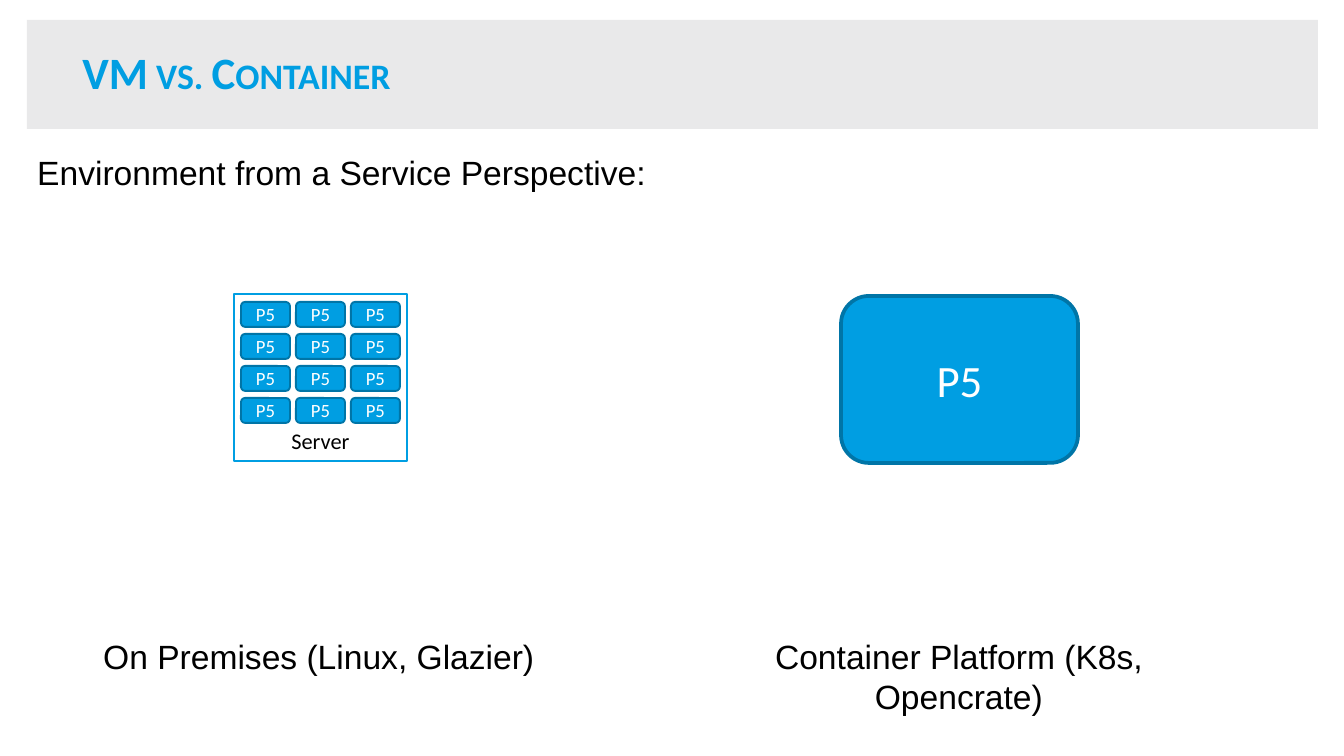
from pptx import Presentation
from pptx.dml.color import RGBColor
from pptx.enum.shapes import MSO_SHAPE
from pptx.enum.text import MSO_ANCHOR, MSO_AUTO_SIZE, PP_ALIGN
from pptx.util import Pt

RECT, ROUNDED = MSO_SHAPE.RECTANGLE, MSO_SHAPE.ROUNDED_RECTANGLE
MIDDLE, BOTTOM = MSO_ANCHOR.MIDDLE, MSO_ANCHOR.BOTTOM
LEFT, CENTER = PP_ALIGN.LEFT, PP_ALIGN.CENTER
FIT_TEXT = MSO_AUTO_SIZE.SHAPE_TO_FIT_TEXT

EMU_PER_PX = 914400 / 134.4
TITLE_ONLY = 5
COLORS = {
    "band": "E9E9EA",
    "blue": "009EE2",
    "dark_blue": "0075A7",
    "white": "FFFFFF",
    "black": "000000",
}


def px(*lengths):
    return [round(length * EMU_PER_PX) for length in lengths]


def rgb(name):
    return RGBColor.from_string(COLORS[name])


def add_text(frame, text, size, color, font="Calibri", align=CENTER):
    paragraph = frame.paragraphs[0]
    paragraph.alignment = align
    run = paragraph.add_run()
    run.text = text
    run.font.name = font
    run.font.size = Pt(size)
    run.font.color.rgb = rgb(color)
    return run


def add_box(shapes, kind, at, fill, line=None, line_width=1):
    box = shapes.add_shape(kind, *px(*at))
    box.shadow.inherit = False
    box.fill.solid()
    box.fill.fore_color.rgb = rgb(fill)
    if line:
        box.line.color.rgb = rgb(line)
        box.line.width = Pt(line_width)
    else:
        box.line.fill.background()
    return box


def add_service(shapes, at, size, line_width=1):
    service = add_box(shapes, ROUNDED, at, "blue", "dark_blue", line_width)
    frame = service.text_frame
    frame.margin_left = frame.margin_right = 0
    frame.margin_top = frame.margin_bottom = 0
    frame.vertical_anchor = MIDDLE
    add_text(frame, "P5", size, "white")


def add_server(slide):
    """Server box holding a grid of four rows of three services."""
    server = slide.shapes.add_group_shape().shapes
    host = add_box(server, RECT, (234, 294, 173, 167), "white", "blue")
    host.text_frame.vertical_anchor = BOTTOM
    add_text(host.text_frame, "Server", 12, "black")
    for row in range(4):
        for column in range(3):
            at = (241 + 55 * column, 302 + 32 * row, 49, 25)
            add_service(server, at, 10)


def add_caption(slide, at, text, align=LEFT):
    frame = slide.shapes.add_textbox(*px(*at)).text_frame
    frame.word_wrap = False
    frame.auto_size = FIT_TEXT
    add_text(frame, text, 18, "black", "Arial", align)


def add_title(slide, text):
    band = add_box(slide.shapes, RECT, (27, 20, 1291, 109), "band")
    title = slide.shapes.title
    title._element.addprevious(band._element)  # keep the band behind the title
    title.left, title.top, title.width, title.height = px(69, 28, 921, 87)
    title.text_frame.vertical_anchor = MIDDLE
    run = add_text(title.text_frame, text, 24, "blue", align=LEFT)
    run.font.bold = True
    run._r.get_or_add_rPr().set("cap", "small")


def main():
    deck = Presentation()
    deck.slide_width, deck.slide_height = px(1344, 756)
    slide = deck.slides.add_slide(deck.slide_layouts[TITLE_ONLY])

    add_title(slide, "VM vs. Container")
    add_server(slide)
    add_service(slide.shapes, (841, 296, 237, 167), 24, line_width=2)
    add_caption(slide, (90, 629, 493, 54), "On Premises (Linux, Glazier)")
    add_caption(slide, (677, 629, 564, 54),
                "Container Platform (K8s, Opencrate)", CENTER)
    add_caption(slide, (24, 145, 641, 54),
                "Environment from a Service Perspective:")

    deck.save("out.pptx")


if __name__ == "__main__":
    main()
